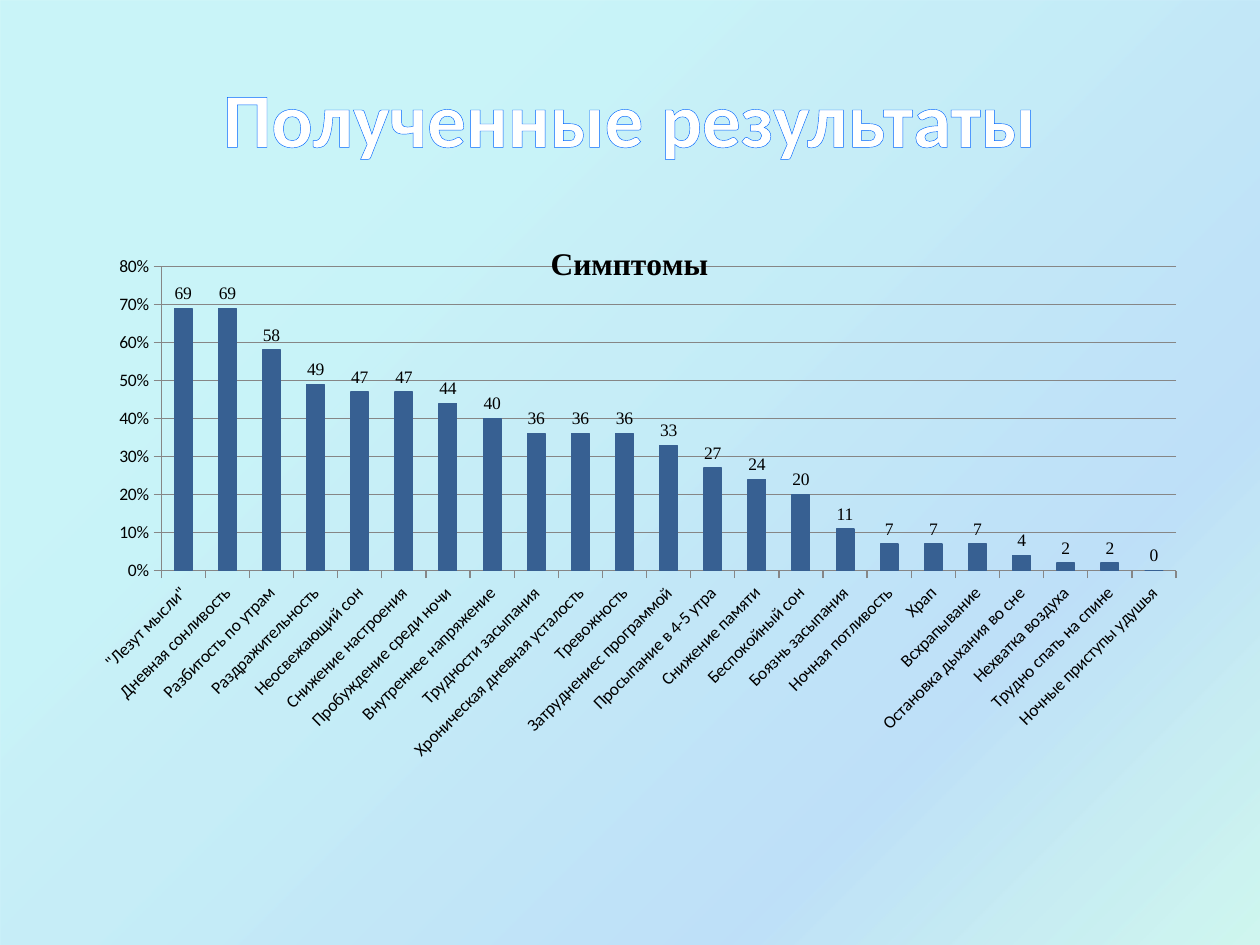
"""Build a slide with a column chart of symptom frequencies."""
from lxml.etree import SubElement
from pptx import Presentation
from pptx.chart.data import CategoryChartData
from pptx.dml.color import RGBColor
from pptx.enum.chart import XL_CHART_TYPE, XL_LABEL_POSITION, XL_TICK_MARK
from pptx.enum.shapes import MSO_SHAPE
from pptx.enum.text import MSO_ANCHOR, PP_ALIGN
from pptx.oxml import parse_xml
from pptx.oxml.ns import nsdecls, qn
from pptx.util import Cm, Pt

WHITE = RGBColor(0xFF, 0xFF, 0xFF)
BLACK = RGBColor(0, 0, 0)
BLUE = RGBColor(0x00, 0x66, 0xFF)
NAVY = RGBColor(0x37, 0x60, 0x92)
GRAY = RGBColor(0x86, 0x86, 0x86)
STOPS = [
    (25, RGBColor(0x21, 0xD6, 0xE0), 23),
    (75, RGBColor(0x00, 0x87, 0xE6), 25),
    (100, RGBColor(0x03, 0xD4, 0xA8), 18),
    (100, RGBColor(0x00, 0x5C, 0xBF), 26),
]
ROWS = [
    ('"Лезут мысли"', 69),
    ("Дневная сонливость", 69),
    ("Разбитость по утрам", 58),
    ("Раздражительность", 49),
    ("Неосвежающий сон", 47),
    ("Снижение настроения", 47),
    ("Пробуждение среди ночи", 44),
    ("Внутреннее напряжение", 40),
    ("Трудности засыпания", 36),
    ("Хроническая дневная усталость", 36),
    ("Тревожность", 36),
    ("Затруднениес программой", 33),
    ("Просыпание в 4-5 утра", 27),
    ("Снижение памяти", 24),
    ("Беспокойный сон", 20),
    ("Боязнь засыпания", 11),
    ("Ночная потливость", 7),
    ("Храп", 7),
    ("Всхрапывание", 7),
    ("Остановка дыхания во сне", 4),
    ("Нехватка воздуха", 2),
    ("Трудно спать на спине", 2),
    ("Ночные приступы удушья", 0),
]


def write(frame, text, size=10, face="Times New Roman", color=BLACK, bold=False):
    para = frame.paragraphs[0]
    para.alignment = PP_ALIGN.CENTER
    run = para.add_run()
    run.text = text
    run.font.size = Pt(size)
    run.font.name = face
    run.font.bold = bold
    run.font.color.rgb = color
    return run


deck = Presentation()
deck.slide_width, deck.slide_height = Cm(25.4), Cm(19.05)
slide = deck.slides.add_slide(deck.slide_layouts[6])

back = slide.shapes.add_shape(MSO_SHAPE.RECTANGLE, 0, 0, Cm(25.4), Cm(19.48))
back.shadow.inherit = False
back.line.fill.background()
back.fill.gradient()
back.fill.gradient_angle = 315
stop_list = back.element.spPr.find(qn("a:gradFill")).find(qn("a:gsLst"))
for stop in list(stop_list):
    stop_list.remove(stop)
for place, color, alpha in STOPS:
    stop = SubElement(stop_list, qn("a:gs"), pos=str(place * 1000))
    tint = SubElement(stop, qn("a:srgbClr"), val=str(color))
    SubElement(tint, qn("a:alpha"), val=str(alpha * 1000))

title = slide.shapes.add_textbox(Cm(1.27), Cm(0.76), Cm(22.86), Cm(3.18))
title.text_frame.word_wrap = True
title.text_frame.vertical_anchor = MSO_ANCHOR.MIDDLE
run = write(title.text_frame, "Полученные результаты",
            size=44, face="Calibri", color=WHITE, bold=True)
run.font._element.insert(0, parse_xml(
    f'<a:ln {nsdecls("a")} w="{Pt(1.45)}"><a:solidFill>'
    f'<a:srgbClr val="{BLUE}"/></a:solidFill></a:ln>'))

data = CategoryChartData(number_format="0%")
data.categories = [name for name, rate in ROWS]
data.add_series("Series 1", [rate / 100 for name, rate in ROWS])
chart = slide.shapes.add_chart(
    XL_CHART_TYPE.COLUMN_CLUSTERED,
    Cm(1.26), Cm(4.43), Cm(22.86), Cm(12.57), data).chart
chart.font.size = Pt(10)
chart.font.name = "Calibri"
chart.font.color.rgb = BLACK
chart.has_legend = False
chart.has_title = True
write(chart.chart_title.text_frame, "Симптомы", size=18, bold=True)
chart.chart_title.include_in_layout = True

plot = chart.plots[0]
plot.gap_width = 150
plot.vary_by_categories = False
bars = plot.series[0]
bars.format.fill.solid()
bars.format.fill.fore_color.rgb = NAVY
bars.format.line.color.rgb = NAVY
bars.format.line.width = Pt(0.75)
for spot, (name, rate) in enumerate(ROWS):
    label = bars.points[spot].data_label
    write(label.text_frame, str(rate))
    label.position = XL_LABEL_POSITION.OUTSIDE_END

for axis in (chart.category_axis, chart.value_axis):
    axis.major_tick_mark = XL_TICK_MARK.OUTSIDE
    axis.minor_tick_mark = XL_TICK_MARK.NONE
    axis.format.line.color.rgb = GRAY
    axis.format.line.width = Pt(0.75)
rates = chart.value_axis
rates.minimum_scale, rates.maximum_scale, rates.major_unit = 0, 0.8, 0.1
rates.tick_labels.number_format = "0%"
rates.tick_labels.number_format_is_linked = False
rates.has_major_gridlines = True
rates.major_gridlines.format.line.color.rgb = GRAY
rates.major_gridlines.format.line.width = Pt(0.75)

area = chart._chartSpace.chart.plotArea
for old in area.findall(qn("c:layout")):
    area.remove(old)
area.insert(0, parse_xml(
    f'<c:layout {nsdecls("c")}><c:manualLayout><c:layoutTarget val="inner"/>'
    '<c:xMode val="edge"/><c:yMode val="edge"/><c:x val="0.087"/>'
    '<c:y val="0.075"/><c:w val="0.895"/><c:h val="0.488"/>'
    '</c:manualLayout></c:layout>'))

deck.save("out.pptx")
